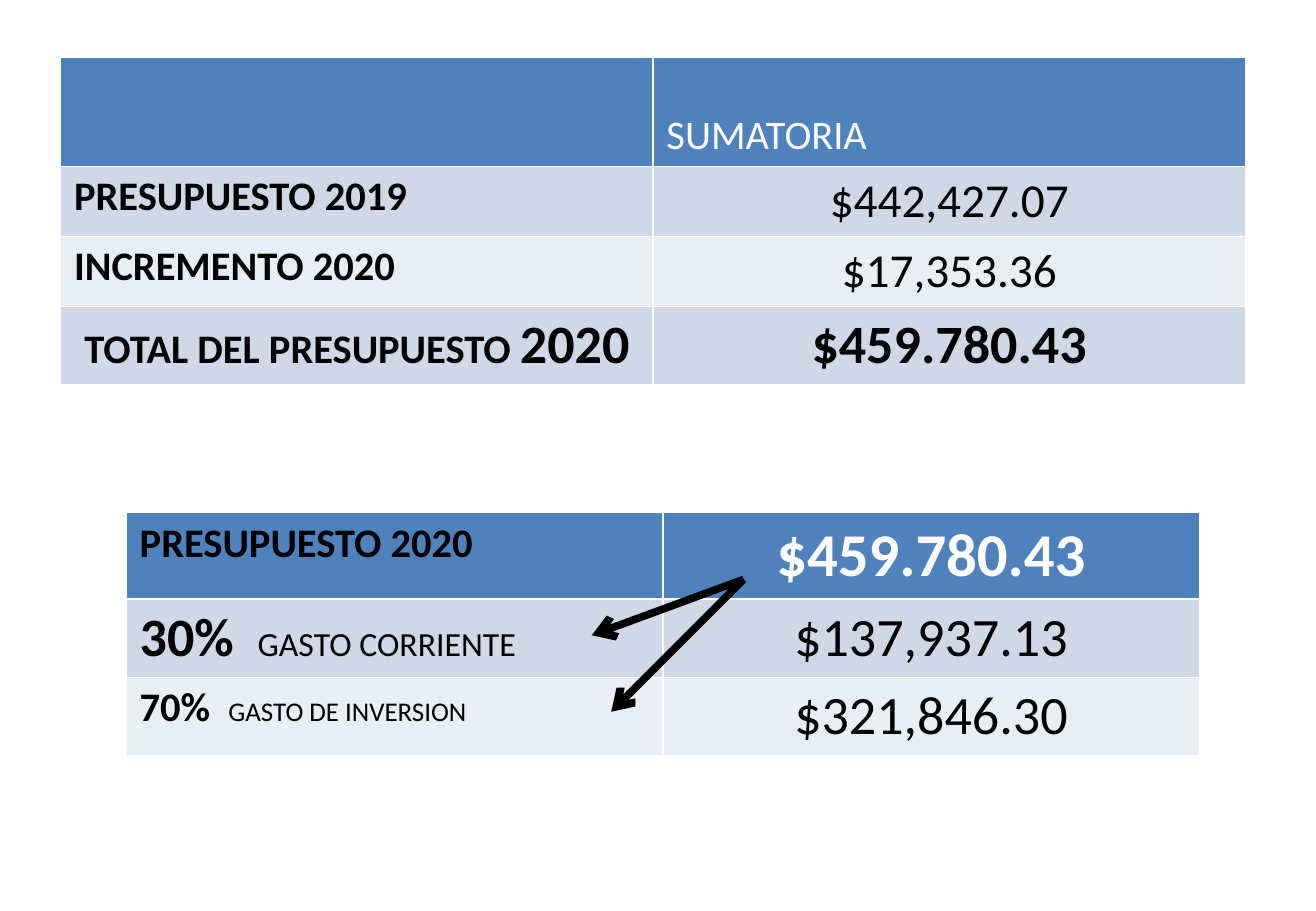
from lxml import etree
from pptx import Presentation
from pptx.dml.color import RGBColor
from pptx.enum.shapes import MSO_CONNECTOR
from pptx.enum.text import MSO_ANCHOR as Anchor, PP_ALIGN as Align
from pptx.oxml.ns import qn
from pptx.util import Inches, Pt

COLORS = {"header": "4F81BD", "band": "D0D8E8", "light": "E9EDF4",
          "black": "000000", "white": "FFFFFF"}


def color(name):
    return RGBColor.from_string(COLORS[name])


def add_budget_table(page, left, top, width, rows):
    """Rows hold a height, a fill name and two cells; a cell holds its format and its runs."""
    height = sum(row[0] for row in rows)
    table = page.shapes.add_table(len(rows), 2, Inches(left), Inches(top),
                                  Inches(width), Inches(height)).table
    for row_index, (row_height, fill, cells) in enumerate(rows):
        table.rows[row_index].height = Inches(row_height)
        for column_index, (layout, runs) in enumerate(cells):
            cell = table.cell(row_index, column_index)
            cell.fill.solid()
            cell.fill.fore_color.rgb = color(fill)
            cell.margin_left = cell.margin_right = Inches(0.11)
            cell.vertical_anchor = layout.get("anchor", Anchor.TOP)
            para = cell.text_frame.paragraphs[0]
            para.alignment = layout.get("align", Align.LEFT)
            if "tab" in layout:
                tabs = etree.SubElement(para._p.get_or_add_pPr(), qn("a:tabLst"))
                etree.SubElement(tabs, qn("a:tab"), pos=str(Inches(layout["tab"])), algn="l")
            for text, size, bold in runs:
                span = para.add_run()
                span.text = text
                values = {"name": "Calibri", "size": Pt(size), "bold": bold}
                for key, value in values.items():
                    setattr(span.font, key, value)
                span.font.color.rgb = color(layout.get("color", "black"))


deck = Presentation()
deck.slide_width, deck.slide_height = Inches(10.83), Inches(7.5)
page = deck.slides.add_slide(deck.slide_layouts[6])

LEFT = {}
CENTER = {"align": Align.CENTER}
MIDDLE = {"align": Align.CENTER, "anchor": Anchor.MIDDLE}
WHITE_BOTTOM = {"color": "white", "anchor": Anchor.BOTTOM}
WHITE_CENTER = {"color": "white", "align": Align.CENTER}

add_budget_table(page, 0.5, 0.47, 9.75, [
    (0.9, "header", [(LEFT, []), (WHITE_BOTTOM, [("SUMATORIA", 24, False)])]),
    (0.57, "band", [(LEFT, [("PRESUPUESTO 2019", 24, True)]),
                    (CENTER, [("$442,427.07", 28, False)])]),
    (0.57, "light", [(LEFT, [("INCREMENTO 2020", 24, True)]),
                     (CENTER, [("$17,353.36", 28, False)])]),
    (0.64, "band", [(CENTER, [("TOTAL DEL PRESUPUESTO ", 24, True), ("2020", 32, True)]),
                    (MIDDLE, [("$459.780.43", 32, True)])]),
])
add_budget_table(page, 1.04, 4.22, 8.83, [
    (0.71, "header", [(LEFT, [("PRESUPUESTO 2020", 24, True)]),
                      (WHITE_CENTER, [("$459.780.43", 36, True)])]),
    (0.64, "band", [({"tab": 0.97}, [("30%\t", 32, True), ("GASTO CORRIENTE", 20, False)]),
                    (CENTER, [("$137,937.13", 32, False)])]),
    (0.64, "light", [({"tab": 0.73}, [("70%\t", 24, True), ("GASTO DE INVERSION", 16, False)]),
                     (CENTER, [("$321,846.30", 32, False)])]),
])

for end_x, end_y in [(4.87, 5.23), (5.03, 5.86)]:
    arrow = page.shapes.add_connector(MSO_CONNECTOR.STRAIGHT, Inches(6.12), Inches(4.77),
                                      Inches(end_x), Inches(end_y))
    arrow.line.color.rgb = color("black")
    arrow.line.width = Pt(4.5)
    etree.SubElement(arrow.line._get_or_add_ln(), qn("a:tailEnd"), type="arrow")
    etree.SubElement(arrow._element.spPr, qn("a:effectLst"))

deck.save("out.pptx")
